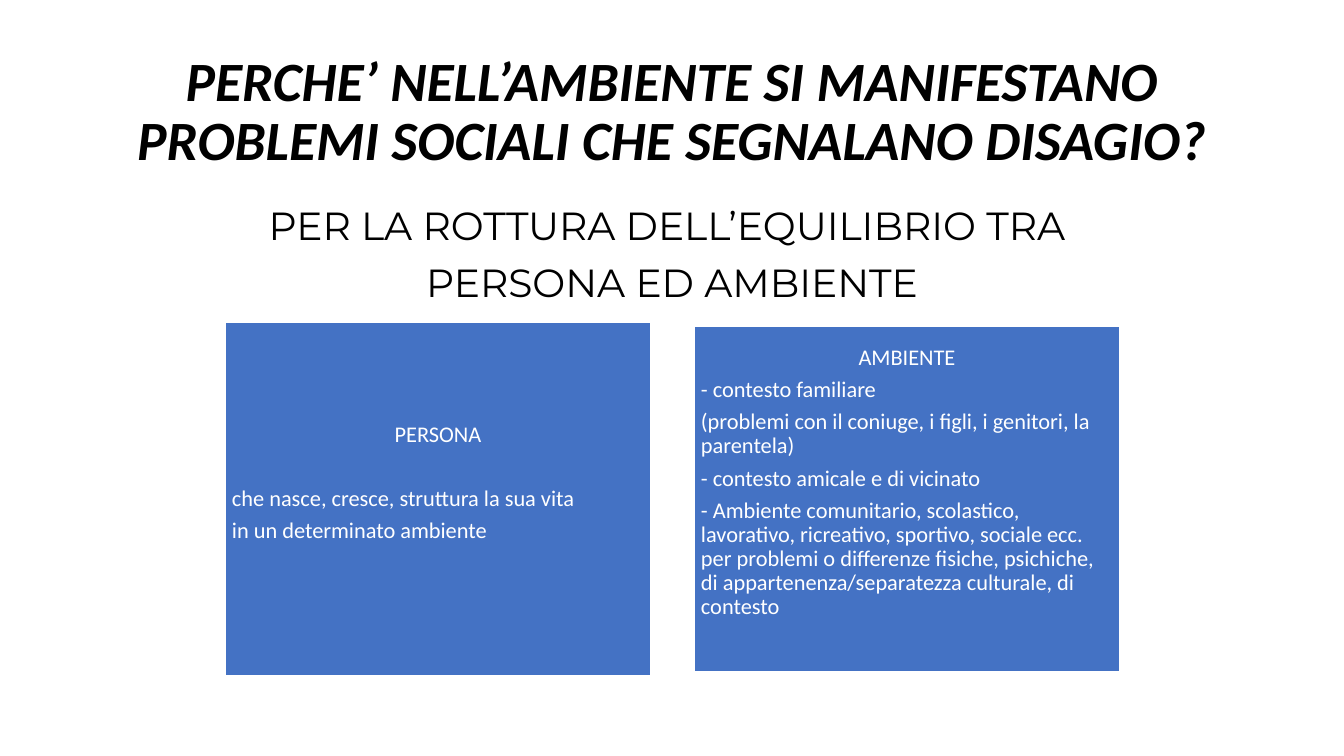
import pptx
import pptx.dml.color
import pptx.enum.shapes
import pptx.enum.text
import pptx.util

EMU_PER_PX = 914400 / 100.8
ALIGN = pptx.enum.text.PP_ALIGN
ANCHOR = pptx.enum.text.MSO_ANCHOR


def px(length):
    return pptx.util.Emu(round(length * EMU_PER_PX))


def color(hex_string):
    return pptx.dml.color.RGBColor.from_string(hex_string)


class SlideBuilder:
    """Holds the style and the current slide."""

    BODY_FONT = "Calibri"
    SUBTITLE_FONT = "Montserrat"
    INK, PAPER, PANEL = "000000", "FFFFFF", "4472C4"
    LINE_SPACING = 0.9
    PANEL_SIZE = 16
    PANEL_GAP = 5.6
    PANEL_INSET = 7

    def __init__(self, presentation):
        title_only = presentation.slide_layouts[5]
        self.slide = presentation.slides.add_slide(title_only)

    def paragraph(self, frame, index, text, size, font, ink,
                  align=ALIGN.CENTER, before=0, after=0, emphasis=False):
        paragraph = frame.paragraphs[0] if index == 0 else frame.add_paragraph()
        paragraph.alignment = align
        paragraph.line_spacing = self.LINE_SPACING
        paragraph.space_before = pptx.util.Pt(before)
        paragraph.space_after = pptx.util.Pt(after)
        run = paragraph.add_run()
        run.text = text
        run.font.size = pptx.util.Pt(size)
        run.font.name = font
        run.font.color.rgb = color(ink)
        run.font.bold = run.font.italic = emphasis

    def title(self, text, left, top, width, height):
        heading = self.slide.shapes.title
        heading.left, heading.top = px(left), px(top)
        heading.width, heading.height = px(width), px(height)
        frame = heading.text_frame
        frame.word_wrap = True
        frame.auto_size = pptx.enum.text.MSO_AUTO_SIZE.NONE
        frame.vertical_anchor = ANCHOR.MIDDLE
        self.paragraph(frame, 0, text, 39.6, self.BODY_FONT, self.INK,
                       emphasis=True)

    def subtitle(self, lines, left, top, width, height):
        box = self.slide.shapes.add_textbox(px(left), px(top), px(width), px(height))
        frame = box.text_frame
        frame.word_wrap = True
        for index, line in enumerate(lines):
            self.paragraph(frame, index, line, 28, self.SUBTITLE_FONT, self.INK,
                           before=10)

    def panel(self, heading, details, left, top, width, height, heading_gap):
        rectangle = self.slide.shapes.add_shape(
            pptx.enum.shapes.MSO_SHAPE.RECTANGLE,
            px(left), px(top), px(width), px(height))
        rectangle.shadow.inherit = False
        rectangle.fill.solid()
        rectangle.fill.fore_color.rgb = color(self.PANEL)
        rectangle.line.color.rgb = color(self.PAPER)
        rectangle.line.width = pptx.util.Pt(1)

        frame = rectangle.text_frame
        frame.word_wrap = True
        frame.vertical_anchor = ANCHOR.MIDDLE
        frame.margin_left = frame.margin_right = frame.margin_top = px(self.PANEL_INSET)
        # A deeper bottom inset lifts the text by half a line
        frame.margin_bottom = px(self.PANEL_INSET + 32)

        self.paragraph(frame, 0, heading, self.PANEL_SIZE, self.BODY_FONT,
                       self.PAPER, after=heading_gap)
        for index, detail in enumerate(details, start=1):
            after = self.PANEL_GAP if index < len(details) else 0
            self.paragraph(frame, index, detail, self.PANEL_SIZE, self.BODY_FONT,
                           self.PAPER, align=ALIGN.LEFT, after=after)


def main():
    presentation = pptx.Presentation()
    presentation.slide_width, presentation.slide_height = px(1344), px(756)
    builder = SlideBuilder(presentation)

    # Question and answer
    builder.title(
        "PERCHE’ NELL’AMBIENTE SI MANIFESTANO PROBLEMI SOCIALI CHE SEGNALANO DISAGIO?",
        92, 40, 1160, 146)
    builder.subtitle(
        ["PER LA ROTTURA DELL’EQUILIBRIO TRA ", "PERSONA ED AMBIENTE"],
        92, 202, 1160, 480)

    # The two sides of the balance
    builder.panel(
        "PERSONA",
        ["che nasce, cresce, struttura la sua vita", "in un determinato ambiente"],
        225, 322, 426, 354, heading_gap=28.5)
    builder.panel(
        "AMBIENTE",
        ["- contesto familiare",
         "(problemi con il coniuge, i figli, i genitori, la parentela)",
         "- contesto amicale e di vicinato",
         "- Ambiente comunitario, scolastico, lavorativo, ricreativo, sportivo, "
         "sociale ecc. per problemi o differenze fisiche, psichiche, di "
         "appartenenza/separatezza culturale, di contesto"],
        694, 326, 426, 346, heading_gap=builder.PANEL_GAP)

    presentation.save("out.pptx")


if __name__ == "__main__":
    main()
